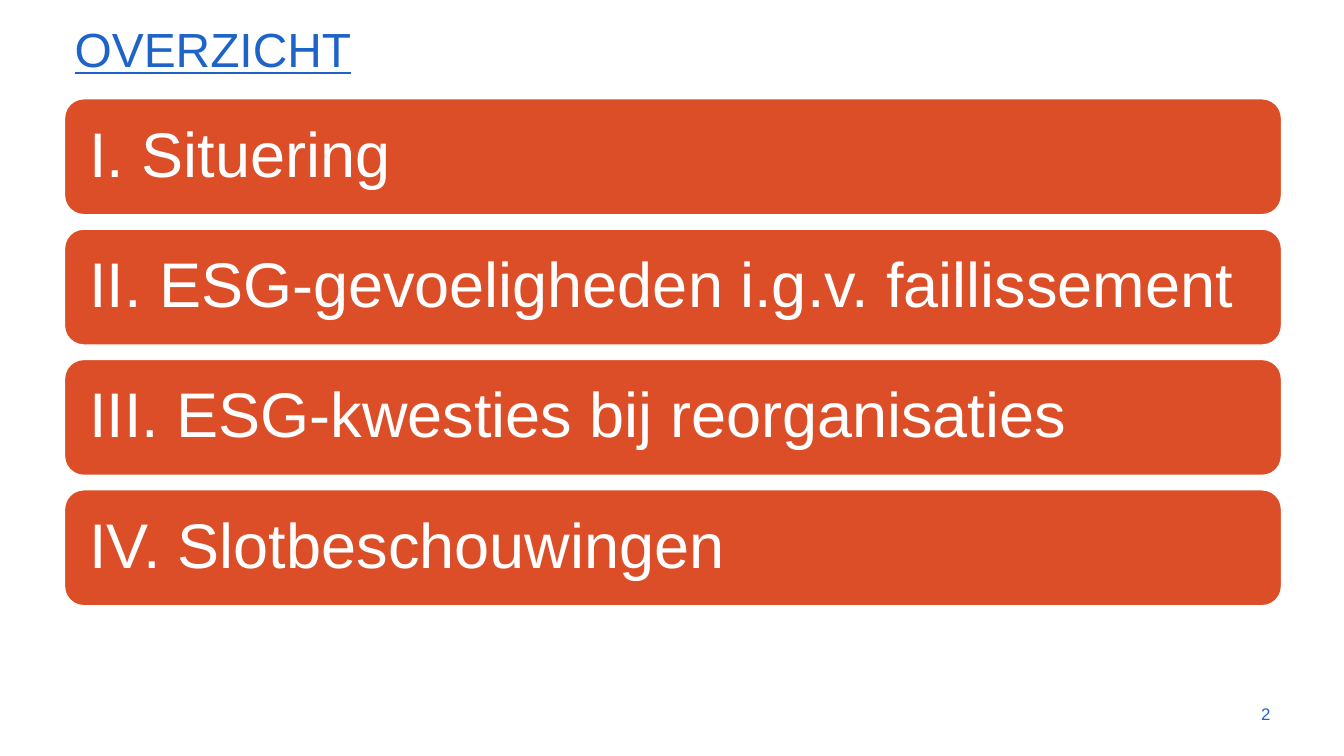
from pptx import Presentation
from pptx.dml.color import RGBColor
from pptx.enum import shapes, text
from pptx.util import Inches, Pt

COLOURS = {"blue": "1E64C8", "orange": "DC4E28", "white": "FFFFFF"}
FONT = "Arial"
LEFT, BAR_TOP = 0.64, 0.98
BAR_WIDTH, BAR_HEIGHT, BAR_STEP = 12.07, 1.15, 1.293
CHAPTERS = [
    "I. Situering",
    "II. ESG-gevoeligheden i.g.v. faillissement",
    "III. ESG-kwesties bij reorganisaties",
    "IV. Slotbeschouwingen",
]


def colour(name):
    return RGBColor.from_string(COLOURS[name])


def write(box, words, size, colour_name, align=text.PP_ALIGN.LEFT,
          spacing=None, underline=None):
    frame = box.text_frame
    frame.word_wrap = True
    frame.auto_size = text.MSO_AUTO_SIZE.NONE
    frame.vertical_anchor = text.MSO_ANCHOR.MIDDLE
    para = frame.paragraphs[0]
    para.alignment = align
    para.line_spacing = spacing
    span = para.add_run()
    span.text = words
    span.font.name = FONT
    span.font.size = Pt(size)
    span.font.underline = underline
    span.font.color.rgb = colour(colour_name)


def add_title(page, words):
    title = page.shapes.title
    title.left, title.top = Inches(LEFT), Inches(0.19)
    title.width, title.height = Inches(12.08), Inches(0.66)
    write(title, words, 34.2, "blue", spacing=0.9, underline=True)


def add_bar(page, top, words):
    bar = page.shapes.add_shape(
        shapes.MSO_SHAPE.ROUNDED_RECTANGLE,
        Inches(LEFT), Inches(top), Inches(BAR_WIDTH), Inches(BAR_HEIGHT))
    bar.shadow.inherit = False
    bar.fill.solid()
    bar.fill.fore_color.rgb = colour("orange")
    bar.line.color.rgb = colour("white")
    bar.line.width = Pt(1)
    frame = bar.text_frame
    frame.margin_left = frame.margin_right = Inches(0.19)
    frame.margin_top = frame.margin_bottom = Inches(0.19)
    write(bar, words, 45, "white", spacing=0.9)


def add_page_number(page, number):
    box = page.shapes.add_textbox(
        Inches(11.99), Inches(6.88), Inches(0.71), Inches(0.4))
    write(box, number, 12, "blue", align=text.PP_ALIGN.RIGHT)


def main():
    deck = Presentation()
    deck.slide_width, deck.slide_height = Inches(13.33), Inches(7.5)
    page = deck.slides.add_slide(deck.slide_layouts[5])

    # Heading
    add_title(page, "OVERZICHT")

    # One bar per chapter
    for index, chapter in enumerate(CHAPTERS):
        add_bar(page, BAR_TOP + index * BAR_STEP, chapter)

    # Footer
    add_page_number(page, "2")
    deck.save("out.pptx")


if __name__ == "__main__":
    main()
